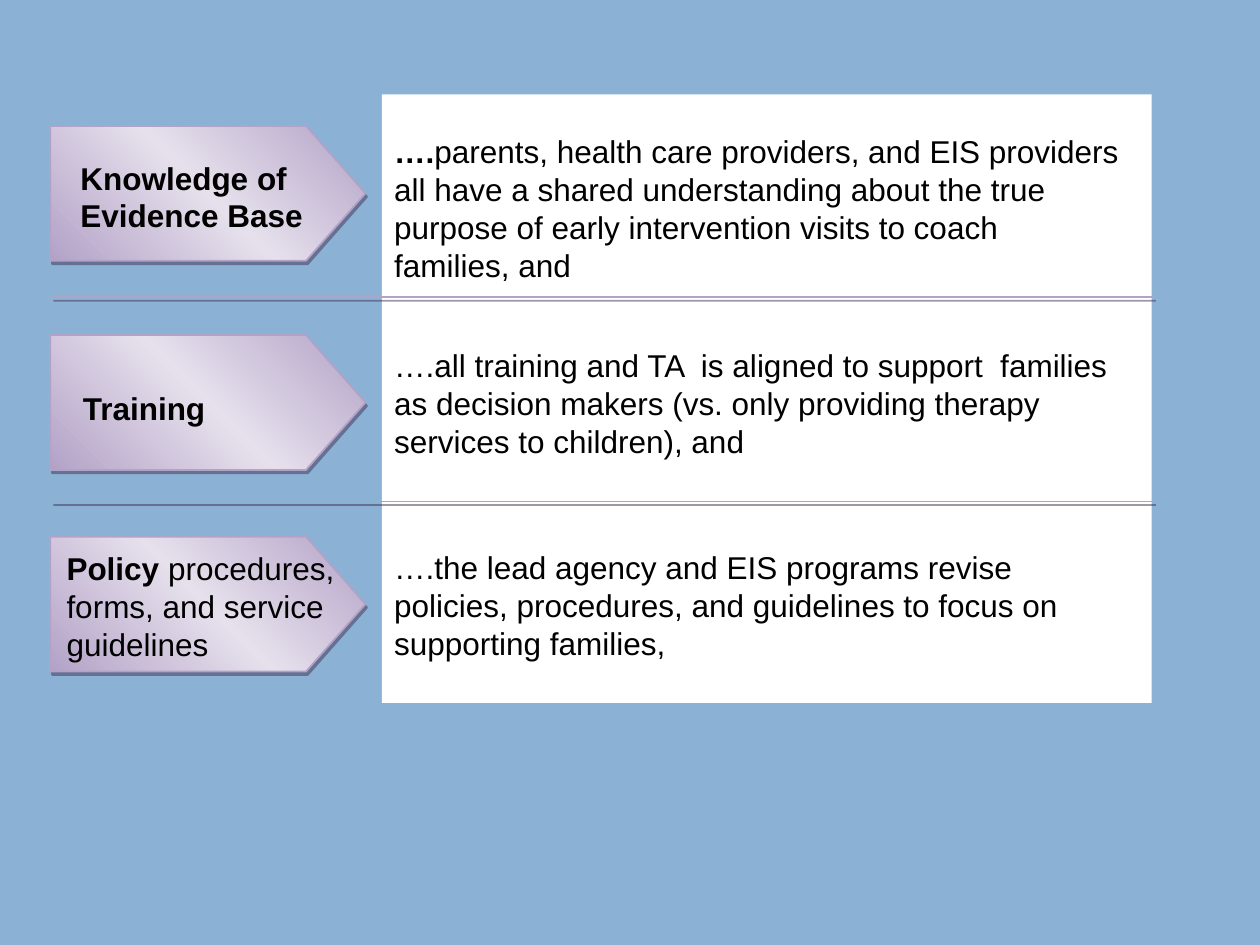
from lxml.etree import SubElement
from pptx import Presentation
from pptx.dml.color import RGBColor
from pptx.enum.shapes import MSO_CONNECTOR, MSO_SHAPE
from pptx.oxml import parse_xml
from pptx.oxml.ns import nsdecls, qn
from pptx.util import Inches, Pt

BACKGROUND = RGBColor(0x8B, 0xB2, 0xD5)
WHITE = RGBColor(0xFF, 0xFF, 0xFF)
BLACK = RGBColor(0, 0, 0)
PURPLE = RGBColor(0xB3, 0xA2, 0xC7)
PALE_PURPLE = RGBColor(0xE6, 0xE0, 0xEC)
SHADOW = RGBColor(0x40, 0x31, 0x52)

ARROW_LEFT, ARROW_WIDTH, ARROW_HEIGHT = 0.4, 2.5, 1.07
PANEL = (3.03, 0.75, 6.11, 4.83)
DIVIDER_LEFT, DIVIDER_RIGHT = 0.41, 9.16
DIVIDER_TOPS = (2.36, 3.98)

# Boxes are left, top, width, height; runs are (text, bold).
ROWS = [
    {
        "arrow_top": 1.0,
        "label_box": (0.54, 1.21, 2.21, 0.71),
        "label": [("Knowledge of Evidence Base", True)],
        "outcome_box": (PANEL[0], 1.0, 5.97, 1.54),
        "outcome": [
            ("….", True),
            ("parents, health care providers, and EIS providers all have a shared "
             "understanding about the true purpose of early intervention visits to "
             "coach families, and", False),
        ],
    },
    {
        "arrow_top": 2.66,
        "label_box": (0.56, 3.04, 2.27, 0.36),
        "label": [("Training", True)],
        "outcome_box": (PANEL[0], 2.7, 5.97, 1.03),
        "outcome": [
            ("….all training and TA  is aligned to support  families as decision "
             "makers (vs. only providing therapy services to children), and", False),
        ],
    },
    {
        "arrow_top": 4.26,
        "label_box": (0.43, 4.31, 2.44, 0.9),
        "label": [("Policy ", True),
                  ("procedures, forms, and service guidelines", False)],
        "outcome_box": (PANEL[0], 4.3, 5.49, 1.04),
        "outcome": [
            ("….the lead agency and EIS programs revise policies, procedures, and "
             "guidelines to focus on supporting families,", False),
        ],
    },
]


def inches(*lengths):
    return [Inches(length) for length in lengths]


def add_shadow(shape):
    effects = SubElement(shape._element.spPr, qn("a:effectLst"))
    shadow = SubElement(effects, qn("a:outerShdw"), blurRad="0", dist=str(Pt(2.2)),
                        dir=str(63 * 60000), algn="ctr", rotWithShape="0")
    color = SubElement(shadow, qn("a:srgbClr"), val=str(SHADOW))
    SubElement(color, qn("a:alpha"), val="50000")


def set_outline(shape):
    shape.line.color.rgb = PURPLE
    shape.line.width = Pt(1)


def add_arrow(slide, top):
    arrow = slide.shapes.add_shape(
        MSO_SHAPE.PENTAGON, *inches(ARROW_LEFT, top, ARROW_WIDTH, ARROW_HEIGHT))
    arrow.adjustments[0] = 0.44
    set_outline(arrow)
    stops = "".join(
        f'<a:gs pos="{position * 1000}"><a:srgbClr val="{color}"/></a:gs>'
        for position, color in ((0, PURPLE), (50, PALE_PURPLE), (100, PURPLE)))
    gradient = parse_xml(
        f'<a:gradFill {nsdecls("a")} rotWithShape="1"><a:gsLst>{stops}</a:gsLst>'
        f'<a:lin ang="{315 * 60000}" scaled="0"/></a:gradFill>')
    arrow._element.spPr.find(qn("a:prstGeom")).addnext(gradient)
    add_shadow(arrow)


def add_text(slide, box, runs):
    frame = slide.shapes.add_textbox(*inches(*box)).text_frame
    frame.word_wrap = True
    paragraph = frame.paragraphs[0]
    paragraph.font.name = "Arial"
    paragraph.font.size = Pt(18)
    paragraph.font.color.rgb = BLACK
    for text, bold in runs:
        run = paragraph.add_run()
        run.text = text
        run.font.bold = bold


def main():
    presentation = Presentation()
    presentation.slide_width, presentation.slide_height = inches(10, 7.5)
    slide = presentation.slides.add_slide(presentation.slide_layouts[6])
    slide.background.fill.solid()
    slide.background.fill.fore_color.rgb = BACKGROUND

    panel = slide.shapes.add_shape(MSO_SHAPE.RECTANGLE, *inches(*PANEL))
    panel.shadow.inherit = False
    panel.fill.solid()
    panel.fill.fore_color.rgb = WHITE
    panel.line.fill.background()

    for row in ROWS:
        add_arrow(slide, row["arrow_top"])
        add_text(slide, row["label_box"], row["label"])

    for top in DIVIDER_TOPS:
        divider = slide.shapes.add_connector(
            MSO_CONNECTOR.STRAIGHT, *inches(DIVIDER_LEFT, top, DIVIDER_RIGHT, top))
        set_outline(divider)
        add_shadow(divider)

    for row in ROWS:
        add_text(slide, row["outcome_box"], row["outcome"])

    presentation.save("out.pptx")


if __name__ == "__main__":
    main()
